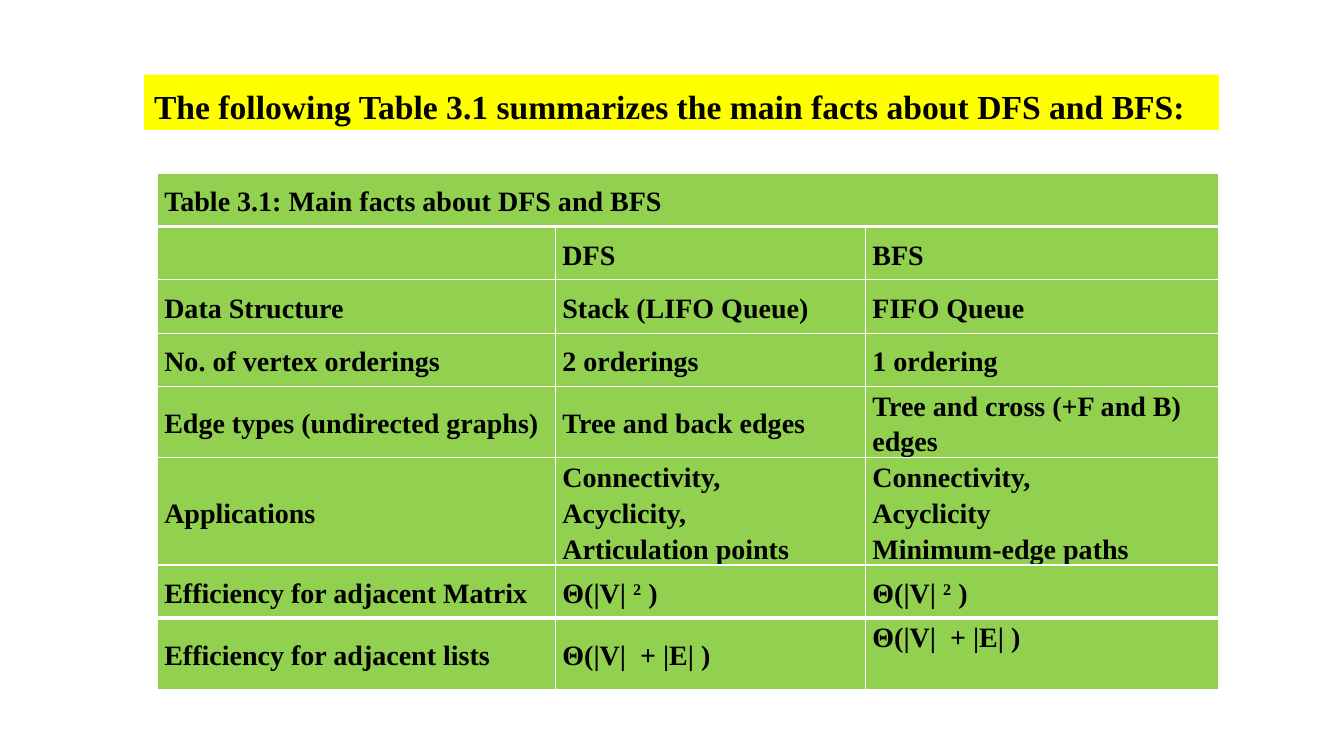
from dataclasses import dataclass

from lxml.etree import SubElement
from pptx import Presentation
from pptx.dml.color import RGBColor
from pptx.enum.shapes import MSO_SHAPE
from pptx.enum.text import MSO_ANCHOR, PP_ALIGN
from pptx.oxml.ns import qn
from pptx.util import Inches, Pt


@dataclass(frozen=True)
class Theme:
    """Colours, font and sizes of the slide."""

    font: str = "Times New Roman"
    ink: str = "000000"
    banner: str = "FFFF00"
    cell: str = "92D050"
    rule: str = "FFFFFF"
    heading_size: int = 24
    body_size: int = 20
    line_spacing: float = 1.15
    thin: int = 1
    thick: int = 3


THEME = Theme()
BANNER_BOX = (10.73, 9.87, 79.97, 7.33)
TABLE_BOX = (11.7, 22.93, 79, 68.1)
COLUMN_SHARES = (37.5, 29.2, 33.3)
ROW_UNITS = (3, 3, 3, 3, 4, 6, 3, 4)
HEADING = "The following Table 3.1 summarizes the main facts about DFS and BFS:"
FACTS = (
    ("Table 3.1: Main facts about DFS and BFS", "", ""),
    ("", "DFS", "BFS"),
    ("Data Structure", "Stack (LIFO Queue)", "FIFO Queue"),
    ("No. of vertex orderings", "2 orderings", "1 ordering"),
    ("Edge types (undirected graphs)", "Tree and back edges",
     "Tree and cross (+F and B) edges"),
    ("Applications", "Connectivity,\nAcyclicity,\nArticulation points",
     "Connectivity,\nAcyclicity\nMinimum-edge paths"),
    ("Efficiency for adjacent Matrix", "Θ(|V| ^2^ )", "Θ(|V| ^2^ )"),
    ("Efficiency for adjacent lists", "Θ(|V|  + |E| )", "Θ(|V|  + |E| )"),
)


def place(slide_size, shares):
    """Turn percentages of the slide into left, top, width and height."""
    width, height = slide_size
    return [int(side * share / 100)
            for side, share in zip((width, height, width, height), shares)]


def write(frame, text, size=THEME.body_size, color=THEME.ink, bold=True):
    """Write lines of text, raising whatever stands between carets."""
    frame.word_wrap = True
    for number, line in enumerate(text.split("\n")):
        paragraph = frame.add_paragraph() if number else frame.paragraphs[0]
        paragraph.alignment = PP_ALIGN.LEFT
        paragraph.line_spacing = THEME.line_spacing
        for part, piece in enumerate(line.split("^")):
            run = paragraph.add_run()
            run.text = piece
            run.font.name = THEME.font
            run.font.size = Pt(size)
            run.font.bold = bold
            run.font.color.rgb = RGBColor.from_string(color)
            if part % 2:
                run.font._element.set("baseline", "30000")


def rule_cell(cell, top, bottom):
    """Draw the four borders of a cell."""
    properties = cell._tc.get_or_add_tcPr()
    widths = {"lnL": THEME.thin, "lnR": THEME.thin, "lnT": top, "lnB": bottom}
    for side, width in widths.items():
        line = SubElement(properties, qn(f"a:{side}"), w=str(Pt(width)))
        fill = SubElement(line, qn("a:solidFill"))
        SubElement(fill, qn("a:srgbClr"), val=THEME.rule)


def add_banner(slide, box):
    """Add the highlighted heading."""
    banner = slide.shapes.add_shape(MSO_SHAPE.RECTANGLE, *box)
    banner.shadow.inherit = False
    banner.fill.solid()
    banner.fill.fore_color.rgb = RGBColor.from_string(THEME.banner)
    banner.line.fill.background()
    write(banner.text_frame, HEADING, size=THEME.heading_size)
    banner.text_frame.vertical_anchor = MSO_ANCHOR.TOP


def add_facts(slide, box):
    """Add the table comparing the two searches."""
    left, top, width, height = box
    table = slide.shapes.add_table(
        len(FACTS), len(COLUMN_SHARES), left, top, width, height).table
    table.horz_banding = False
    for column, share in zip(table.columns, COLUMN_SHARES):
        column.width = int(width * share / 100)
    for row, units in zip(table.rows, ROW_UNITS):
        row.height = int(height * units / sum(ROW_UNITS))
    last = len(FACTS) - 1
    thick_edges = (1, last)
    for r, facts in enumerate(FACTS):
        for c, fact in enumerate(facts):
            cell = table.cell(r, c)
            rule_cell(cell, *(THEME.thick if edge in thick_edges else THEME.thin
                              for edge in (r, r + 1)))
            cell.fill.solid()
            cell.fill.fore_color.rgb = RGBColor.from_string(THEME.cell)
            cell.margin_left = cell.margin_right = Inches(0.07)
            cell.margin_top = cell.margin_bottom = 0
            cell.vertical_anchor = MSO_ANCHOR.MIDDLE
            if fact:
                write(cell.text_frame, fact)
    table.cell(last, 2).vertical_anchor = MSO_ANCHOR.TOP
    table.cell(0, 0).merge(table.cell(0, 2))


def main():
    """Build and save the slide."""
    deck = Presentation()
    deck.slide_width, deck.slide_height = Inches(13.33), Inches(7.5)
    size = deck.slide_width, deck.slide_height
    slide = deck.slides.add_slide(deck.slide_layouts[6])
    add_facts(slide, place(size, TABLE_BOX))
    add_banner(slide, place(size, BANNER_BOX))
    deck.save("out.pptx")


if __name__ == "__main__":
    main()
